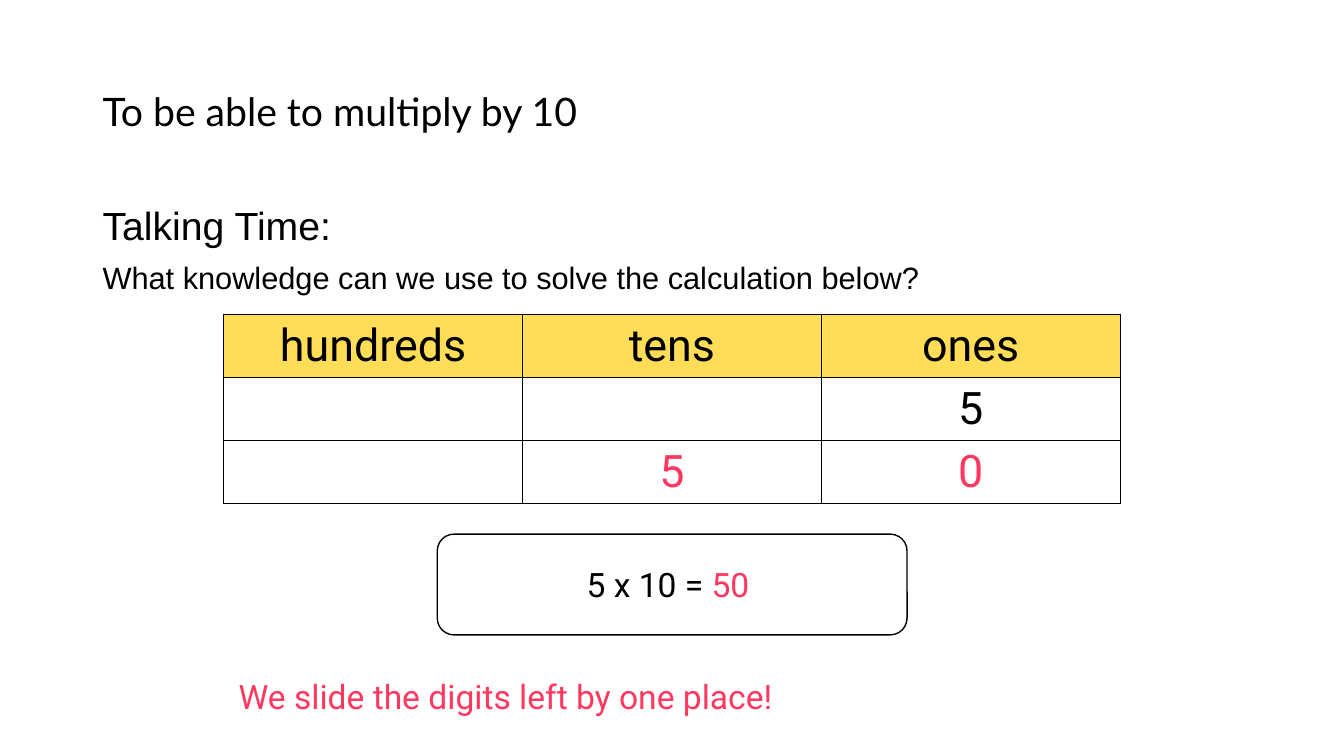
from dataclasses import dataclass

import pptx
import pptx.dml.color
import pptx.enum.shapes
import pptx.enum.text
import pptx.oxml
import pptx.oxml.ns
import pptx.util
from pptx.util import Cm, Pt

ALIGN = pptx.enum.text.PP_ALIGN
ANCHOR = pptx.enum.text.MSO_ANCHOR


@dataclass(frozen=True)
class Theme:
    ink: str = "000000"
    answer: str = "FF3860"
    header: str = "FFDD57"
    paper: str = "FFFFFF"
    title_font: str = "Lato"
    body_font: str = "Arial"
    maths_font: str = "Roboto"
    heading_size: int = 28
    question_size: int = 22
    table_size: int = 32
    maths_size: int = 24
    line_width: int = 1


THEME = Theme()


def rgb(colour):
    return pptx.dml.color.RGBColor.from_string(colour)


def style_span(span, font, size, colour):
    span.font.name = font
    span.font.size = Pt(size)
    span.font.color.rgb = rgb(colour)


def place(box, left, top, width, height):
    box.left, box.top, box.width, box.height = map(Cm, (left, top, width, height))


def fill_placeholder(box, lines, font, anchor):
    """Write (text, size) lines as left-aligned paragraphs without bullets."""
    frame = box.text_frame
    frame.text = "\n".join(text for text, _ in lines)
    frame.auto_size = pptx.enum.text.MSO_AUTO_SIZE.NONE
    frame.vertical_anchor = anchor
    for index, (para, (_, size)) in enumerate(zip(frame.paragraphs, lines)):
        para.alignment = ALIGN.LEFT
        para.line_spacing = 0.9
        para.space_before = Pt(10 if index else 0)
        properties = para._p.get_or_add_pPr()
        properties.set("marL", "0")
        properties.set("indent", "0")
        pptx.oxml.ns  # namespace prefixes for the bullet element
        properties.append(pptx.oxml.parse_xml(
            f'<a:buNone {pptx.oxml.ns.nsdecls("a")}/>'))
        style_span(para.runs[0], font, size, THEME.ink)


def border_cell(cell):
    properties = cell._tc.get_or_add_tcPr()
    for index, side in enumerate("LRTB"):
        properties.insert(index, pptx.oxml.parse_xml(
            f'<a:ln{side} {pptx.oxml.ns.nsdecls("a")} w="{Pt(THEME.line_width)}">'
            f'<a:solidFill><a:srgbClr val="{THEME.ink}"/></a:solidFill>'
            f'</a:ln{side}>'))


def add_place_value_table(page, rows, left, top, column_width, row_height):
    """Draw rows of (text, colour) cells under a coloured header row."""
    columns = len(rows[0])
    table = page.shapes.add_table(
        len(rows), columns, Cm(left), Cm(top),
        Cm(column_width * columns), Cm(row_height * len(rows))).table
    table.first_row = table.horz_banding = False
    for row_index, row in enumerate(rows):
        table.rows[row_index].height = Cm(row_height)
        for column_index, (text, colour) in enumerate(row):
            cell = table.cell(row_index, column_index)
            cell.fill.solid()
            cell.fill.fore_color.rgb = rgb(THEME.paper if row_index else THEME.header)
            border_cell(cell)
            if text:
                cell.text_frame.text = text
                para = cell.text_frame.paragraphs[0]
                para.alignment = ALIGN.CENTER
                style_span(para.runs[0], THEME.maths_font, THEME.table_size, colour)


def add_rounded_box(page, spans, alignment, left, top, width, height, outlined):
    box = page.shapes.add_shape(
        pptx.enum.shapes.MSO_SHAPE.ROUNDED_RECTANGLE,
        Cm(left), Cm(top), Cm(width), Cm(height))
    box.shadow.inherit = False
    if outlined:
        box.fill.solid()
        box.fill.fore_color.rgb = rgb(THEME.paper)
        box.line.color.rgb = rgb(THEME.ink)
        box.line.width = Pt(THEME.line_width)
    else:
        box.fill.background()
        box.line.fill.background()
    frame = box.text_frame
    frame.word_wrap = True
    frame.vertical_anchor = ANCHOR.MIDDLE
    para = frame.paragraphs[0]
    para.alignment = alignment
    for text, colour in spans:
        span = para.add_run()
        span.text = text
        style_span(span, THEME.maths_font, THEME.maths_size, colour)


def main():
    deck = pptx.Presentation()
    deck.slide_width, deck.slide_height = Cm(33.87), Cm(19.05)
    page = deck.slides.add_slide(deck.slide_layouts[1])
    title, body = page.placeholders

    place(title, 2.33, 1.02, 24.38, 3.68)
    fill_placeholder(title, [("To be able to multiply by 10", THEME.heading_size)],
                     THEME.title_font, ANCHOR.MIDDLE)
    place(body, 2.33, 5.08, 29.21, 12.09)
    fill_placeholder(body, [
        ("Talking Time:", THEME.heading_size),
        ("What knowledge can we use to solve the calculation below?",
         THEME.question_size),
    ], THEME.body_font, ANCHOR.TOP)

    ink, answer = THEME.ink, THEME.answer
    empty = ("", ink)
    add_rounded_box(page, [("5 x 10 = ", ink), ("50 ", answer)],
                    ALIGN.CENTER, 11.02, 13.46, 11.84, 2.54, outlined=True)
    add_place_value_table(page, [
        [("hundreds", ink), ("tens", ink), ("ones", ink)],
        [empty, empty, ("5", ink)],
        [empty, ("5", answer), ("0", answer)],
    ], left=5.64, top=7.92, column_width=7.53, row_height=1.59)
    add_rounded_box(page, [("We slide the digits left by one place!", answer)],
                    ALIGN.LEFT, 5.64, 16.28, 20.55, 2.54, outlined=False)

    deck.save("out.pptx")


if __name__ == "__main__":
    main()
